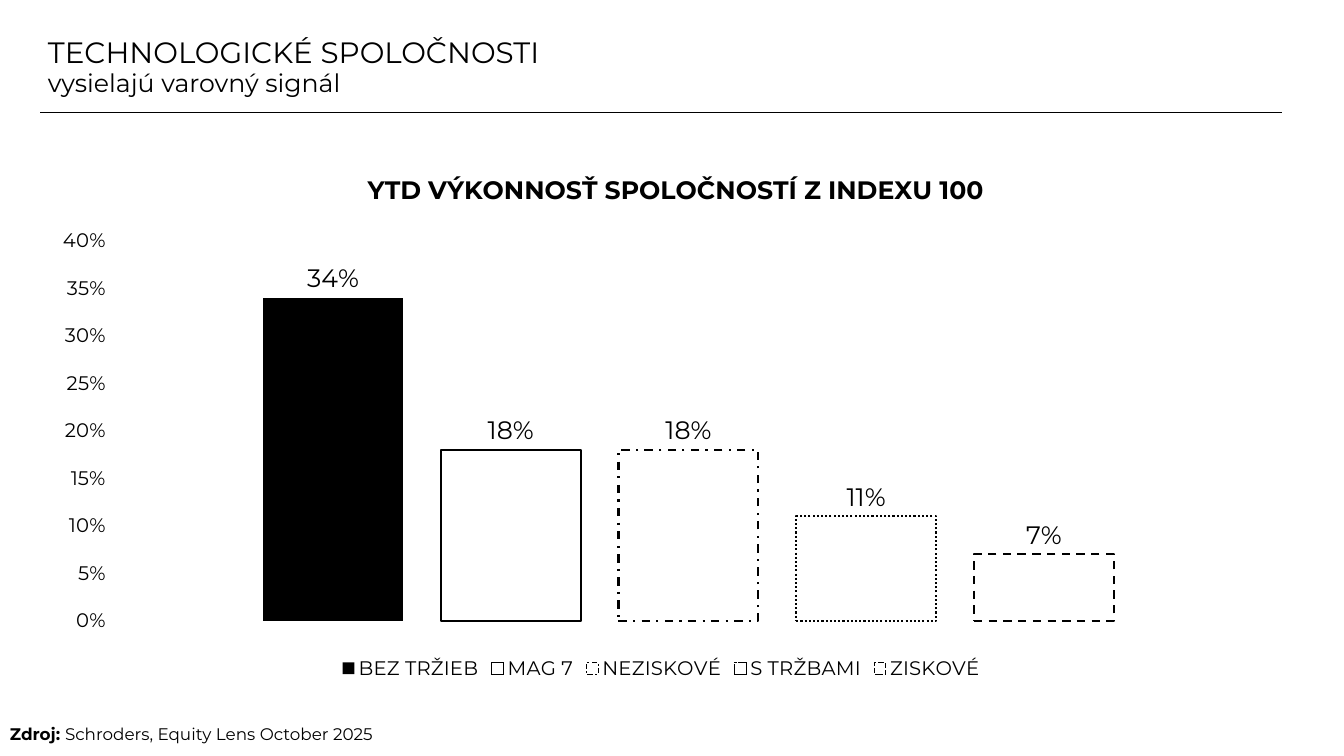
from dataclasses import dataclass

from lxml import etree
from pptx import Presentation
from pptx.chart.data import CategoryChartData
from pptx.dml.color import RGBColor
from pptx.enum.chart import (XL_CHART_TYPE, XL_LABEL_POSITION,
                             XL_LEGEND_POSITION, XL_TICK_MARK)
from pptx.enum.dml import MSO_LINE
from pptx.enum.shapes import MSO_CONNECTOR
from pptx.enum.text import MSO_ANCHOR, MSO_AUTO_SIZE, PP_ALIGN
from pptx.oxml.ns import qn
from pptx.util import Pt

COLUMN = XL_CHART_TYPE.COLUMN_CLUSTERED
OUTSIDE = XL_LABEL_POSITION.OUTSIDE_END
BOTTOM = XL_LEGEND_POSITION.BOTTOM
NO_TICK = XL_TICK_MARK.NONE
SOLID, DASH_DOT = MSO_LINE.SOLID, MSO_LINE.DASH_DOT
DOT, DASH = MSO_LINE.ROUND_DOT, MSO_LINE.DASH
STRAIGHT = MSO_CONNECTOR.STRAIGHT
MIDDLE = MSO_ANCHOR.MIDDLE
FIXED, GROW = MSO_AUTO_SIZE.NONE, MSO_AUTO_SIZE.SHAPE_TO_FIT_TEXT
LEFT, JUSTIFY = PP_ALIGN.LEFT, PP_ALIGN.JUSTIFY


@dataclass(frozen=True)
class Theme:
    ink: RGBColor = RGBColor(0, 0, 0)
    face: str = "Montserrat"
    head: int = 21
    sub: int = 18
    label: int = 18
    axis: int = 14
    note: int = 12


THEME = Theme()
EDGE, WIDE = 28.8, 887

# Name, value, filled, outline dash
GROUPS = [
    ("BEZ TRŽIEB", 0.34, True, None),
    ("MAG 7", 0.18, False, SOLID),
    ("NEZISKOVÉ", 0.18, False, DASH_DOT),
    ("S TRŽBAMI", 0.11, False, DOT),
    ("ZISKOVÉ", 0.07, False, DASH),
]


def apply(item, **values):
    for name, value in values.items():
        setattr(item, name, value)


def style(font, size, bold=False):
    apply(font, name=THEME.face, size=Pt(size), bold=bold)
    font.color.rgb = THEME.ink


def add_run(para, text, size, bold=False):
    run = para.add_run()
    run.text = text
    style(run.font, size, bold)


def add_title(slide, lines):
    title = slide.shapes.title
    apply(title, left=Pt(EDGE), top=Pt(22.3), width=Pt(WIDE), height=Pt(52.6))
    frame = title.text_frame
    apply(frame, word_wrap=True, auto_size=FIXED, vertical_anchor=MIDDLE,
          margin_left=Pt(5.4), margin_right=Pt(5.4),
          margin_top=Pt(2.7), margin_bottom=Pt(2.7))
    for i, (text, size) in enumerate(lines):
        para = frame.add_paragraph() if i else frame.paragraphs[0]
        apply(para, alignment=LEFT, line_spacing=0.9, space_before=Pt(0))
        add_run(para, text, size)


def add_rule(slide, top):
    rule = slide.shapes.add_connector(
        STRAIGHT, Pt(EDGE), Pt(top), Pt(EDGE + WIDE), Pt(top))
    rule.line.color.rgb = THEME.ink
    rule.line.width = Pt(0.5)
    etree.SubElement(rule._element.spPr, qn("a:effectLst"))


def add_source(slide, lead, text):
    box = slide.shapes.add_textbox(Pt(0), Pt(513.4), Pt(620.6), Pt(21.6))
    apply(box.text_frame, word_wrap=True, auto_size=GROW)
    para = box.text_frame.paragraphs[0]
    para.alignment = JUSTIFY
    add_run(para, lead, THEME.note, True)
    add_run(para, text, THEME.note)


def place(parent, index, **spots):
    """Give a chart part a manual layout, as shares of the chart."""
    for old in parent.findall(qn("c:layout")):
        parent.remove(old)
    layout = etree.Element(qn("c:layout"))
    parent.insert(index, layout)
    manual = etree.SubElement(layout, qn("c:manualLayout"))
    for name, value in spots.items():
        etree.SubElement(manual, qn("c:" + name)).set("val", str(value))


def style_series(series, filled, dash):
    series.invert_if_negative = False
    fill, line = series.format.fill, series.format.line
    if filled:
        fill.solid()
        fill.fore_color.rgb = THEME.ink
    else:
        fill.background()
    if dash is None:
        line.fill.background()
    else:
        line.color.rgb = THEME.ink
        apply(line, width=Pt(1.5), dash_style=dash)
    labels = series.data_labels
    apply(labels, show_value=True, position=OUTSIDE,
          number_format="0%", number_format_is_linked=False)
    style(labels.font, THEME.label)


def add_bars(slide, heading):
    data = CategoryChartData(number_format="0%")
    data.categories = ["1"]
    for name, value, *_ in GROUPS:
        data.add_series(name, [value])
    chart = slide.shapes.add_chart(
        COLUMN, Pt(EDGE), Pt(104.4), Pt(WIDE), Pt(384.5), data).chart
    style(chart.font, THEME.axis)

    # Heading and plot area
    chart.has_title = True
    title = chart.chart_title
    add_run(title.text_frame.paragraphs[0], heading, THEME.label, True)
    title.include_in_layout = False
    place(title._element, 1, xMode="edge", yMode="edge", x=0.26, y=0.04)
    area = chart._chartSpace.chart.plotArea
    place(area, 0, layoutTarget="inner", xMode="edge", yMode="edge",
          x=0.056, y=0.176, w=0.932, h=0.706)

    # Columns
    plot = chart.plots[0]
    apply(plot, gap_width=219, overlap=-27, vary_by_categories=False)
    for series, (_, _, filled, dash) in zip(plot.series, GROUPS):
        style_series(series, filled, dash)

    # Axes
    chart.category_axis.visible = False
    axis = chart.value_axis
    apply(axis, minimum_scale=0, maximum_scale=0.4, major_unit=0.05,
          has_major_gridlines=False, major_tick_mark=NO_TICK,
          minor_tick_mark=NO_TICK)
    axis.format.line.fill.background()
    apply(axis.tick_labels, number_format="0%", number_format_is_linked=False)
    style(axis.tick_labels.font, THEME.axis)

    # Legend
    chart.has_legend = True
    apply(chart.legend, position=BOTTOM, include_in_layout=False)
    style(chart.legend.font, THEME.axis)


def main():
    deck = Presentation()
    apply(deck, slide_width=Pt(960), slide_height=Pt(540))
    slide = deck.slides.add_slide(deck.slide_layouts[5])
    add_rule(slide, 80)
    add_title(slide, [("TECHNOLOGICKÉ SPOLOČNOSTI", THEME.head),
                      ("vysielajú varovný signál", THEME.sub)])
    add_bars(slide, "YTD VÝKONNOSŤ SPOLOČNOSTÍ Z INDEXU 100")
    add_source(slide, "Zdroj: ", "Schroders, Equity Lens October 2025")
    deck.save("out.pptx")


if __name__ == "__main__":
    main()
